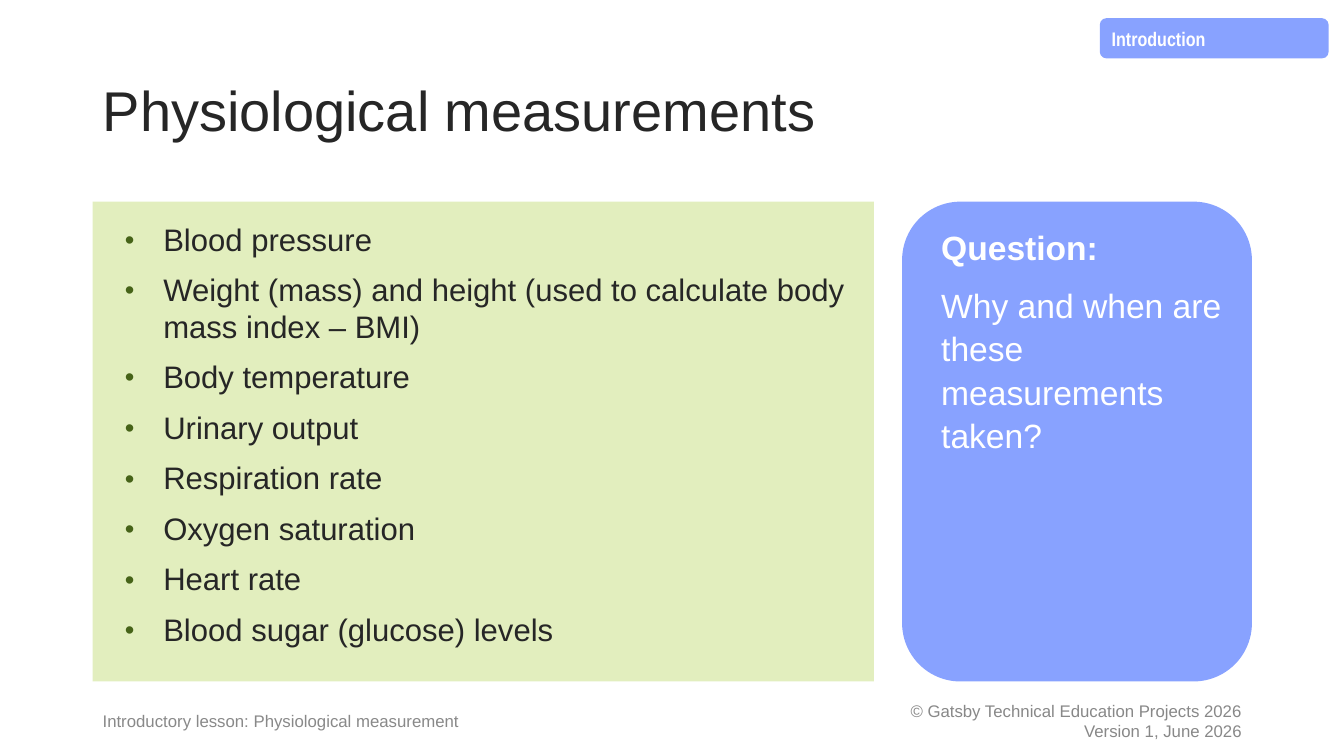
from dataclasses import dataclass

from lxml import etree
from pptx import Presentation
from pptx.dml.color import RGBColor
from pptx.enum.shapes import MSO_SHAPE
from pptx.enum.text import MSO_ANCHOR, MSO_AUTO_SIZE, PP_ALIGN
from pptx.oxml.ns import qn
from pptx.util import Inches, Pt

RECTANGLE = MSO_SHAPE.RECTANGLE
ROUNDED = MSO_SHAPE.FLOWCHART_ALTERNATE_PROCESS
TOP, MIDDLE = MSO_ANCHOR.TOP, MSO_ANCHOR.MIDDLE
LEFT, RIGHT = PP_ALIGN.LEFT, PP_ALIGN.RIGHT
NO_AUTOFIT = MSO_AUTO_SIZE.NONE
TITLE_ONLY = 5


@dataclass(frozen=True)
class Theme:
    font: str = "Arial"
    narrow_font: str = "Arial Narrow"
    ink: str = "262626"
    footer_ink: str = "898989"
    copyright_ink: str = "888888"
    white: str = "FFFFFF"
    blue: str = "88A2FF"
    green: str = "E2EEBE"
    bullet: str = "466318"
    title_size: float = 40
    question_size: float = 24
    list_size: float = 22.2
    tag_size: float = 14
    footer_size: float = 12


def write(frame, lines, *, size, color, font, bold_lines=0, align=LEFT,
          anchor=TOP, spacing=1.0, before=0, indent=(0, 0),
          bullet=None, inset=(0.1, 0.05)):
    frame.word_wrap = True
    frame.auto_size = NO_AUTOFIT
    frame.vertical_anchor = anchor
    frame.margin_left = frame.margin_right = Inches(inset[0])
    frame.margin_top = frame.margin_bottom = Inches(inset[1])
    for index, line in enumerate(lines):
        paragraph = frame.add_paragraph() if index else frame.paragraphs[0]
        properties = paragraph._p.get_or_add_pPr()
        properties.set("marL", str(Inches(indent[0])))
        properties.set("indent", str(Inches(indent[1])))
        if bullet:
            tint = etree.SubElement(properties, qn("a:buClr"))
            etree.SubElement(tint, qn("a:srgbClr"), val=bullet)
            etree.SubElement(properties, qn("a:buSzPct"), val="88000")
            etree.SubElement(properties, qn("a:buFont"), typeface=font)
            etree.SubElement(properties, qn("a:buChar"), char="•")
        paragraph.alignment = align
        paragraph.line_spacing = spacing
        paragraph.space_before = Pt(before if index else 0)
        run = paragraph.add_run()
        run.text = line
        run.font.name = font
        run.font.size = Pt(size)
        run.font.bold = index < bold_lines
        run.font.color.rgb = RGBColor.from_string(color)


class LessonSlide:
    def __init__(self, deck, theme):
        self.theme = theme
        self.width, self.height = deck.slide_width, deck.slide_height
        self.slide = deck.slides.add_slide(deck.slide_layouts[TITLE_ONLY])

    def place(self, left, top, width, height):
        return (round(self.width * left / 100), round(self.height * top / 100),
                round(self.width * width / 100), round(self.height * height / 100))

    def title(self, text, area):
        heading = self.slide.shapes.title
        heading.left, heading.top, heading.width, heading.height = self.place(*area)
        write(heading.text_frame, [text], size=self.theme.title_size,
              color=self.theme.ink, font=self.theme.font, anchor=MIDDLE, spacing=0.9)

    def panel(self, outline, lines, area, fill, **style):
        panel = self.slide.shapes.add_shape(outline, *self.place(*area))
        panel.shadow.inherit = False
        panel.fill.solid()
        panel.fill.fore_color.rgb = RGBColor.from_string(fill)
        panel.line.fill.background()
        write(panel.text_frame, lines, **style)

    def footer(self, lines, area, **style):
        note = self.slide.shapes.add_textbox(*self.place(*area))
        write(note.text_frame, lines, size=self.theme.footer_size,
              font=self.theme.font, anchor=MIDDLE, **style)


def main():
    deck = Presentation()
    deck.slide_width, deck.slide_height = Inches(13.333), Inches(7.5)
    theme = Theme()
    lesson = LessonSlide(deck, theme)

    margin, content_width = 6.9, 86.25
    content_right = margin + content_width
    panel_top, panel_height = 26.67, 63.47
    list_width, question_width = 58.13, 26.03
    footer_top, footer_height = 92.67, 5.33
    footer_width, copyright_width = 34.5, 33.75

    lesson.footer(["Introductory lesson: Physiological measurement"],
                  (margin, footer_top, footer_width, footer_height),
                  color=theme.footer_ink)
    lesson.footer(["© Gatsby Technical Education Projects 2026",
                   "Version 1, June 2026"],
                  (content_right - copyright_width, footer_top,
                   copyright_width, footer_height),
                  color=theme.copyright_ink, align=RIGHT)
    lesson.title("Physiological measurements", (margin, 5.33, content_width, 19.33))

    measurements = [
        "Blood pressure",
        "Weight (mass) and height (used to calculate body mass index – BMI)",
        "Body temperature",
        "Urinary output",
        "Respiration rate",
        "Oxygen saturation",
        "Heart rate",
        "Blood sugar (glucose) levels",
    ]
    lesson.panel(RECTANGLE, measurements,
                 (margin, panel_top, list_width, panel_height), theme.green,
                 size=theme.list_size, color=theme.ink, font=theme.font,
                 spacing=0.98, before=10, indent=(0.5, -0.38),
                 bullet=theme.bullet, inset=(0.2, 0.2))
    lesson.panel(ROUNDED,
                 ["Question:", "Why and when are these measurements taken?"],
                 (content_right - question_width, panel_top,
                  question_width, panel_height), theme.blue,
                 size=theme.question_size, color=theme.white, font=theme.font,
                 bold_lines=1, spacing=1.08, before=10, indent=(0.12, 0))
    lesson.panel(ROUNDED, ["Introduction"], (81.83, 2.4, 17.03, 5.33), theme.blue,
                 size=theme.tag_size, color=theme.white, font=theme.narrow_font,
                 bold_lines=1, spacing=1.08, indent=(0.39, -0.39))

    deck.save("out.pptx")


if __name__ == "__main__":
    main()
